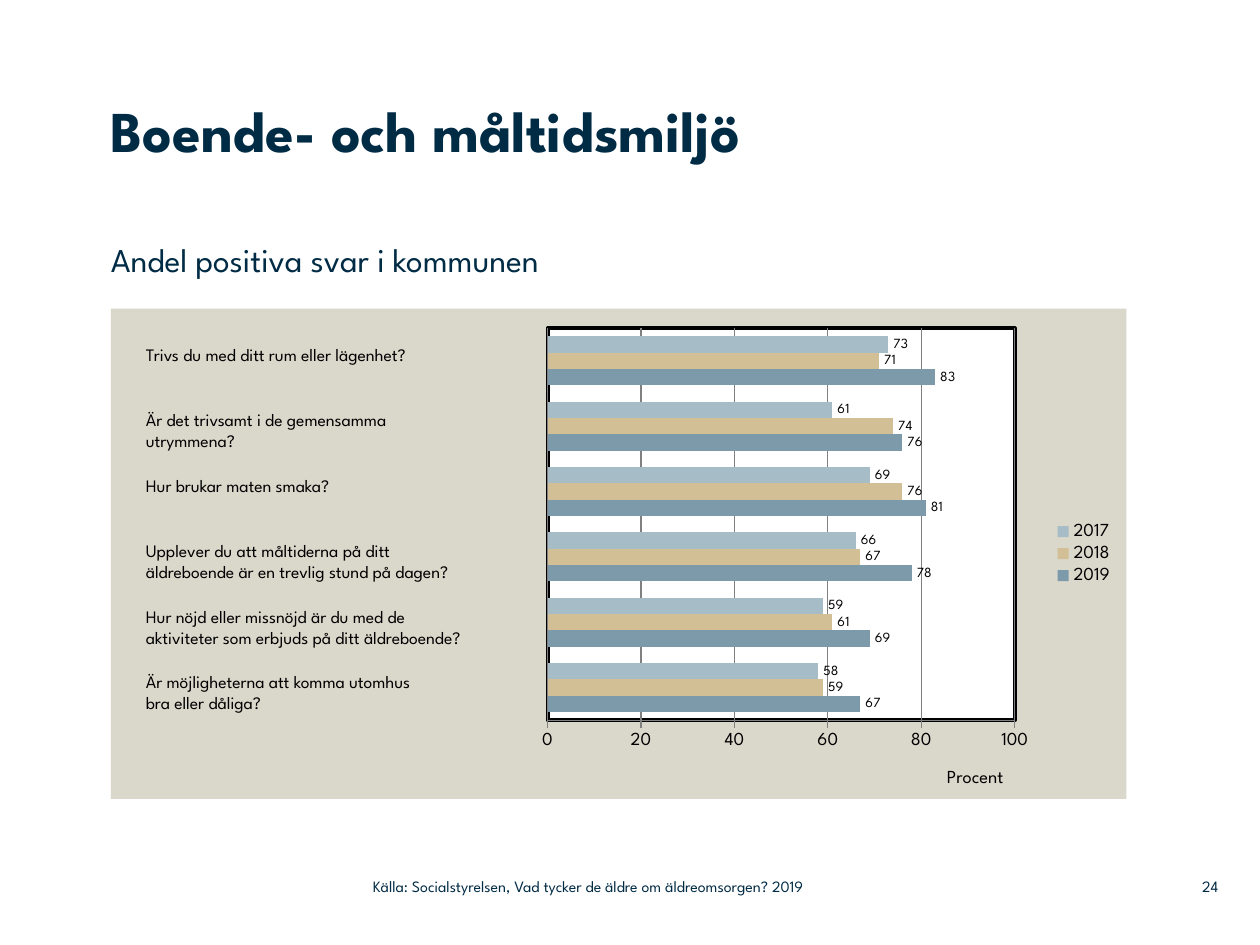
import dataclasses

import lxml.etree
import pptx
import pptx.chart.data
import pptx.dml.color
import pptx.enum.chart
import pptx.enum.text
import pptx.oxml
import pptx.oxml.ns
import pptx.util

Inches = pptx.util.Inches
Anchor = pptx.enum.text.MSO_ANCHOR
Align = pptx.enum.text.PP_ALIGN


@dataclasses.dataclass(frozen=True)
class Theme:
    """Colours, font and type sizes of the slide."""
    font: str = "League Spartan"
    navy: str = "002B45"
    black: str = "000000"
    panel: str = "DAD7CB"
    plot: str = "FFFFFF"
    grid: str = "808080"
    title: float = 33
    subtitle: float = 19
    question: float = 10
    axis: float = 10.5
    value: float = 8
    footer: float = 9


THEME = Theme()
QUESTIONS = [
    ["Trivs du med ditt rum eller lägenhet?"],
    ["Är det trivsamt i de gemensamma", "utrymmena?"],
    ["Hur brukar maten smaka?"],
    ["Upplever du att måltiderna på ditt", "äldreboende är en trevlig stund på dagen?"],
    ["Hur nöjd eller missnöjd är du med de\vaktiviteter som erbjuds på ditt äldreboende?"],
    ["Är möjligheterna att komma utomhus", "bra eller dåliga?"],
]
YEARS = [
    ("2019", "7D9AAA", [67, 69, 78, 81, 76, 83]),
    ("2018", "D3BF96", [59, 61, 67, 76, 74, 71]),
    ("2017", "A6BCC6", [58, 59, 66, 69, 61, 73]),
]


def rgb(value):
    """Turn a hex string into a colour."""
    return pptx.dml.color.RGBColor.from_string(value)


def apply(target, formats):
    """Set every attribute named in formats."""
    for name, value in formats.items():
        setattr(target, name, value)


def style_font(font, size, color, bold=False):
    """Give a font the theme typeface, a size and a colour."""
    apply(font, {"name": THEME.font, "size": pptx.util.Pt(size), "bold": bold})
    font.color.rgb = rgb(color)


def add_text(slide, place, lines, size, color, bold=False, inset=True,
             anchor=Anchor.TOP, align=Align.LEFT):
    """Add a text box with one paragraph per line."""
    frame = slide.shapes.add_textbox(*map(Inches, place)).text_frame
    apply(frame, {"word_wrap": True, "vertical_anchor": anchor})
    if not inset:
        sides = ("left", "top", "right", "bottom")
        apply(frame, {f"margin_{side}": 0 for side in sides})
    frame.text = "\n".join(lines)
    for paragraph in frame.paragraphs:
        paragraph.alignment = align
        style_font(paragraph.font, size, color, bold)


def chart_xml(markup):
    """Parse chart markup with its namespaces declared."""
    head, rest = markup.split(">", 1)
    return pptx.oxml.parse_xml(f"{head} {pptx.oxml.ns.nsdecls('c', 'a')}>{rest}")


def area_format(fill, line):
    """Build the fill and outline of a chart area."""
    return chart_xml(f'<c:spPr><a:solidFill><a:srgbClr val="{fill}"/></a:solidFill>{line}</c:spPr>')


def set_layout(parent, index, **values):
    """Give a chart part a manual layout at a child index."""
    for old in parent.findall(pptx.oxml.ns.qn("c:layout")):
        parent.remove(old)
    fields = "".join(f'<c:{name} val="{value}"/>' for name, value in values.items())
    parent.insert(index, chart_xml(f"<c:layout><c:manualLayout>{fields}</c:manualLayout></c:layout>"))


def format_areas(chart):
    """Colour the panel and the plot, and place the plot."""
    body = chart.plots[0]._element.getparent()
    set_layout(body, 0, layoutTarget="inner", xMode="edge", yMode="edge",
               x=0.43, y=0.04, w=0.46, h=0.8)
    border = (f'<a:ln w="{pptx.util.Pt(2.25)}"><a:solidFill>'
              f'<a:srgbClr val="{THEME.black}"/></a:solidFill></a:ln>')
    body.append(area_format(THEME.plot, border))
    body.getparent().addnext(area_format(THEME.panel, "<a:ln><a:noFill/></a:ln>"))


def format_axes(chart):
    """Hide the question axis and format the percent axis."""
    chart.category_axis.visible = False
    percent = chart.value_axis
    apply(percent, {"minimum_scale": 0, "maximum_scale": 100, "major_unit": 20,
                    "has_major_gridlines": True,
                    "major_tick_mark": pptx.enum.chart.XL_TICK_MARK.OUTSIDE})
    style_font(percent.tick_labels.font, THEME.axis, THEME.black)
    for line in (percent.format.line, percent.major_gridlines.format.line):
        line.color.rgb = rgb(THEME.grid)
        line.width = pptx.util.Pt(0.75)
    title = percent.axis_title
    title.text_frame.text = "Procent"
    style_font(title.text_frame.paragraphs[0].runs[0].font, THEME.axis, THEME.black)
    set_layout(title._element, 1, xMode="edge", yMode="edge", x=0.82, y=0.93)


def format_bars(chart):
    """Colour each year's bars and show their values."""
    plot = chart.plots[0]
    apply(plot, {"gap_width": 100, "overlap": 0, "vary_by_categories": False})
    for series, (_, color, _) in zip(plot.series, YEARS):
        series.format.fill.solid()
        series.format.fill.fore_color.rgb = rgb(color)
        labels = series.data_labels
        apply(labels, {"show_value": True,
                       "position": pptx.enum.chart.XL_LABEL_POSITION.OUTSIDE_END})
        style_font(labels.font, THEME.value, THEME.black)


def add_answers(slide, place):
    """Add the bar chart of positive answers."""
    answers = pptx.chart.data.CategoryChartData()
    answers.categories = [str(number + 1) for number in range(len(QUESTIONS))]
    for year, _, values in YEARS:
        answers.add_series(year, values)
    kind = pptx.enum.chart.XL_CHART_TYPE.BAR_CLUSTERED
    chart = slide.shapes.add_chart(kind, *map(Inches, place), answers).chart
    apply(chart, {"has_title": False, "has_legend": True})
    style_font(chart.font, THEME.question, THEME.black)
    apply(chart.legend, {"position": pptx.enum.chart.XL_LEGEND_POSITION.RIGHT,
                         "include_in_layout": False})
    style_font(chart.legend.font, THEME.axis, THEME.black)
    format_bars(chart)
    format_axes(chart)
    format_areas(chart)


def add_questions(slide, left, top, step):
    """Add the questions at equal steps beside the bars."""
    for row, lines in enumerate(QUESTIONS):
        height = 0.27 if row in (0, 2) else 0.44
        add_text(slide, (left, top + row * step, 3.27, height), lines,
                 THEME.question, THEME.black)


def main():
    """Build and save the slide."""
    deck = pptx.Presentation()
    apply(deck, {"slide_width": Inches(10), "slide_height": Inches(7.5)})
    slide = deck.slides.add_slide(deck.slide_layouts[6])
    add_text(slide, (0.88, 0.75, 8.36, 1.42), ["Boende- och måltidsmiljö"],
             THEME.title, THEME.navy, bold=True, inset=False)
    add_text(slide, (0.88, 1.9, 7.29, 0.45), ["Andel positiva svar i kommunen"],
             THEME.subtitle, THEME.navy, inset=False)
    add_answers(slide, (0.88, 2.45, 8.06, 3.89))
    add_questions(slide, 1.06, 2.68, 0.52)
    add_text(slide, (9.2, 6.89, 0.47, 0.29), ["24"], THEME.footer, THEME.navy,
             inset=False, anchor=Anchor.MIDDLE, align=Align.RIGHT)
    add_text(slide, (2.96, 6.89, 4.43, 0.29),
             ["Källa: Socialstyrelsen, Vad tycker de äldre om äldreomsorgen? 2019"],
             THEME.footer, THEME.navy, inset=False, anchor=Anchor.MIDDLE)
    deck.save("out.pptx")


if __name__ == "__main__":
    main()
